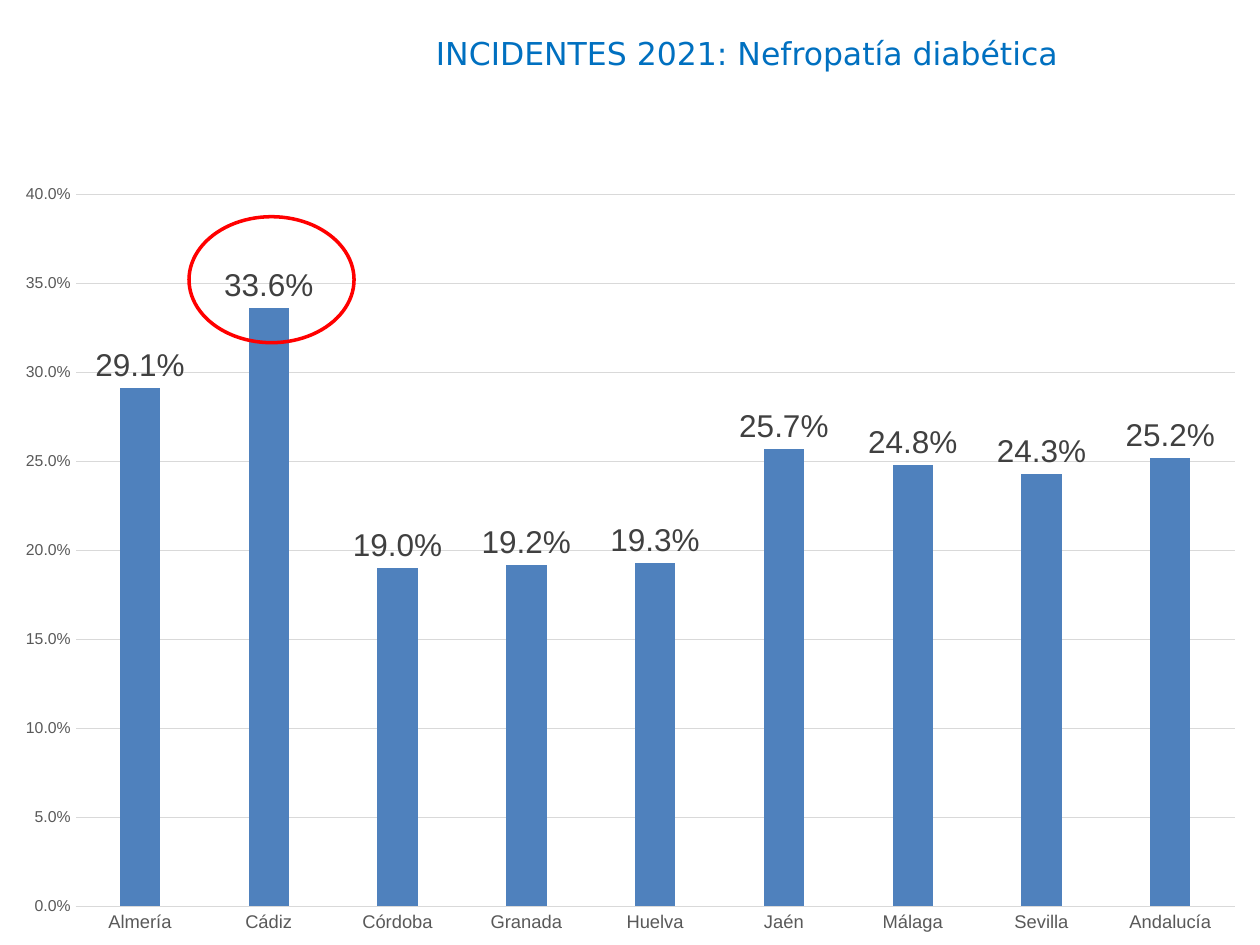
from dataclasses import dataclass

from lxml.etree import SubElement
from pptx import Presentation
from pptx.chart.data import CategoryChartData
from pptx.dml.color import RGBColor
from pptx.enum.chart import XL_CHART_TYPE, XL_LABEL_POSITION, XL_TICK_MARK
from pptx.enum.shapes import MSO_SHAPE
from pptx.enum.text import MSO_ANCHOR, MSO_AUTO_SIZE, PP_ALIGN
from pptx.oxml.ns import qn
from pptx.util import Inches, Pt

TITLE_BLUE = RGBColor(0x00, 0x70, 0xC0)
BAR_BLUE = RGBColor(0x4F, 0x81, 0xBD)
HIGHLIGHT_RED = RGBColor(0xFF, 0x00, 0x00)
BLACK = RGBColor(0x00, 0x00, 0x00)
LABEL_GREY = RGBColor(0x40, 0x40, 0x40)
AXIS_GREY = RGBColor(0x59, 0x59, 0x59)
GRID_GREY = RGBColor(0xD9, 0xD9, 0xD9)
PERCENT = "0.0%"


@dataclass(frozen=True)
class Province:
    name: str
    share: float


PROVINCES = [
    Province("Almería", 0.291),
    Province("Cádiz", 0.336),
    Province("Córdoba", 0.19),
    Province("Granada", 0.192),
    Province("Huelva", 0.193),
    Province("Jaén", 0.257),
    Province("Málaga", 0.248),
    Province("Sevilla", 0.243),
    Province("Andalucía", 0.252),
]


def set_attributes(target, values: dict) -> None:
    for name, value in values.items():
        setattr(target, name, value)


def style_font(font, size: float, color: RGBColor, face: str = "Arial") -> None:
    set_attributes(font, {"size": Pt(size), "name": face, "bold": False})
    font.color.rgb = color


def style_line(line, color: RGBColor, width: float) -> None:
    line.color.rgb = color
    line.width = Pt(width)


def set_plot_area(chart, x: float, y: float, w: float, h: float) -> None:
    """Fix the inner plot area, in fractions of the chart frame."""
    plot_area = chart._chartSpace.chart.plotArea
    layout = plot_area.find(qn("c:layout"))
    if layout is None:
        layout = SubElement(plot_area, qn("c:layout"))
        plot_area.insert(0, layout)
    manual = SubElement(layout, qn("c:manualLayout"))
    settings = {"layoutTarget": "inner", "xMode": "edge", "yMode": "edge",
                "x": x, "y": y, "w": w, "h": h}
    for tag, value in settings.items():
        SubElement(manual, qn(f"c:{tag}")).set("val", str(value))


def add_title(slide, wording: str) -> None:
    title = slide.shapes.title
    set_attributes(title, {"left": Inches(3.36), "top": Inches(0.22),
                           "width": Inches(6.64), "height": Inches(0.4)})
    frame = title.text_frame
    set_attributes(frame, {"text": wording, "word_wrap": True,
                           "auto_size": MSO_AUTO_SIZE.NONE,
                           "vertical_anchor": MSO_ANCHOR.TOP})
    heading = frame.paragraphs[0]
    heading.alignment = PP_ALIGN.LEFT
    style_font(heading.runs[0].font, 18, TITLE_BLUE, "DejaVu Sans")


def add_province_chart(slide, provinces: list[Province]) -> None:
    data = CategoryChartData(number_format=PERCENT)
    data.categories = [province.name for province in provinces]
    data.add_series("Series 1", [province.share for province in provinces])
    chart = slide.shapes.add_chart(
        XL_CHART_TYPE.COLUMN_CLUSTERED,
        Inches(0), Inches(1.36), Inches(10), Inches(6.14), data,
    ).chart
    set_attributes(chart, {"has_legend": False, "has_title": False})
    style_font(chart.font, 10, BLACK)
    set_plot_area(chart, 0.06, 0.03, 0.92, 0.92)

    plot = chart.plots[0]
    set_attributes(plot, {"gap_width": 219, "overlap": -27,
                          "vary_by_categories": False, "has_data_labels": True})
    bar_fill = plot.series[0].format.fill
    bar_fill.solid()
    bar_fill.fore_color.rgb = BAR_BLUE

    labels = plot.data_labels
    set_attributes(labels, {"show_value": True, "number_format": PERCENT,
                            "number_format_is_linked": False,
                            "position": XL_LABEL_POSITION.OUTSIDE_END})
    style_font(labels.font, 18, LABEL_GREY)

    for axis, size in ((chart.category_axis, 10.5), (chart.value_axis, 9)):
        set_attributes(axis, {"major_tick_mark": XL_TICK_MARK.NONE,
                              "minor_tick_mark": XL_TICK_MARK.NONE})
        style_font(axis.tick_labels.font, size, AXIS_GREY)
    style_line(chart.category_axis.format.line, GRID_GREY, 0.75)

    share_axis = chart.value_axis
    set_attributes(share_axis, {"minimum_scale": 0, "maximum_scale": 0.4,
                                "major_unit": 0.05, "has_major_gridlines": True})
    set_attributes(share_axis.tick_labels, {"number_format": PERCENT,
                                            "number_format_is_linked": False})
    share_axis.format.line.fill.background()
    style_line(share_axis.major_gridlines.format.line, GRID_GREY, 0.75)


def add_highlight(slide) -> None:
    highlight = slide.shapes.add_shape(
        MSO_SHAPE.OVAL, Inches(1.5), Inches(1.72), Inches(1.31), Inches(1))
    highlight.shadow.inherit = False
    highlight.fill.background()
    style_line(highlight.line, HIGHLIGHT_RED, 2)


def main() -> None:
    deck = Presentation()
    set_attributes(deck, {"slide_width": Inches(10), "slide_height": Inches(7.5)})
    slide = deck.slides.add_slide(deck.slide_layouts.get_by_name("Title Only"))
    add_title(slide, "INCIDENTES 2021: Nefropatía diabética")
    add_province_chart(slide, PROVINCES)
    add_highlight(slide)
    deck.save("out.pptx")


if __name__ == "__main__":
    main()
